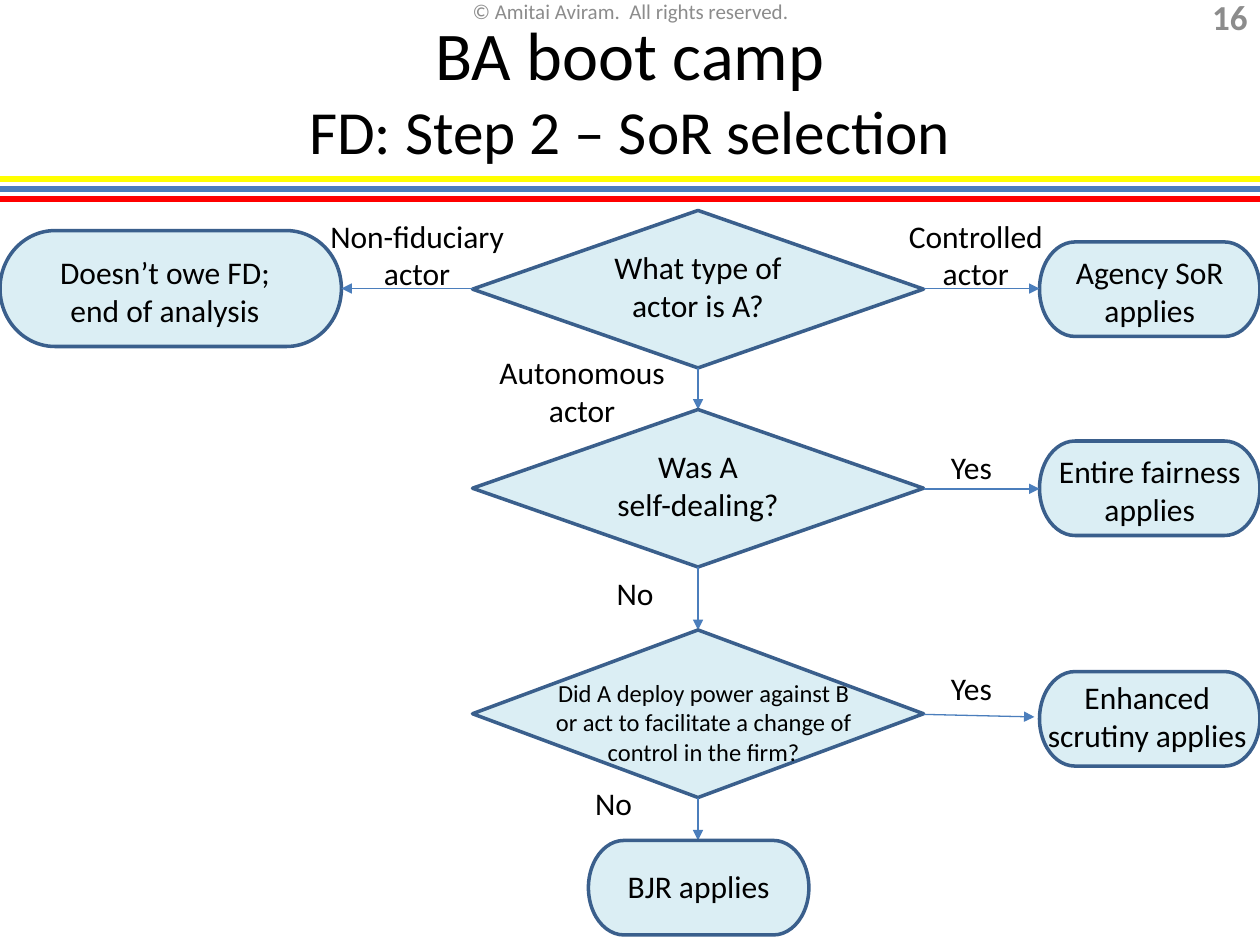
from lxml.etree import SubElement
from pptx import Presentation
from pptx.dml.color import RGBColor
from pptx.enum.shapes import MSO_CONNECTOR, MSO_SHAPE
from pptx.enum.text import MSO_ANCHOR, PP_ALIGN
from pptx.oxml.ns import qn
from pptx.util import Inches, Pt


def color(value):
    """Turn a hex string into a colour."""
    return RGBColor.from_string(value)


def add_text(slide, box, lines, anchor=MSO_ANCHOR.TOP, align=PP_ALIGN.CENTER, tint="000000", bold=False):
    """Add a text box whose (text, size) lines are parted by line breaks."""
    frame = slide.shapes.add_textbox(*map(Inches, box)).text_frame
    frame.word_wrap = True
    frame.vertical_anchor = anchor
    paragraph = frame.paragraphs[0]
    paragraph.alignment = align
    for index, (text, size) in enumerate(lines):
        if index:
            paragraph.add_line_break()
        run = paragraph.add_run()
        run.text = text
        run.font.color.rgb = color(tint)
        formats = {"name": "Calibri", "size": Pt(size), "bold": bold}
        for name, value in formats.items():
            setattr(run.font, name, value)


def add_line(slide, start, end, tint, width, arrow=False):
    """Add a straight line, with an arrowhead at its end if asked."""
    line = slide.shapes.add_connector(MSO_CONNECTOR.STRAIGHT, *map(Inches, (*start, *end)))
    line.line.color.rgb = color(tint)
    line.line.width = Pt(width)
    if arrow:
        SubElement(line.line._get_or_add_ln(), qn("a:tailEnd"), type="triangle")
    SubElement(line._element.spPr, qn("a:effectLst"))


def add_arrow(slide, start, end):
    """Add a thin flow arrow."""
    add_line(slide, start, end, "4B7EBC", 0.75, arrow=True)


def add_node(slide, kind, box, text_box, lines, size=18):
    """Add a flowchart shape with its text placed relative to the shape."""
    left, top, width, height = box
    shape = slide.shapes.add_shape(kind, *map(Inches, box))
    shape.shadow.inherit = False
    shape.fill.solid()
    shape.fill.fore_color.rgb = color("DBEEF4")
    shape.line.color.rgb = color("3A5F8C")
    shape.line.width = Pt(2)
    text_left, text_top, text_width, text_height = text_box
    add_text(slide, (left + text_left, top + text_top, text_width, text_height),
             [(line, size) for line in lines])


def add_header(slide, box):
    """Add the title, copyright line, slide number and coloured rules."""
    left, top, width, height = box
    right, bottom = left + width, top + height
    for offset, tint in ((0.08, "4B7EBC"), (0.16, "FF0000"), (0, "FFFF00")):
        add_line(slide, (left, bottom + offset), (right, bottom + offset), tint, 3)
    middle = MSO_ANCHOR.MIDDLE
    add_text(slide, (left + 3.42, top, 3.17, 0.17),
             [("© Amitai Aviram.  All rights reserved.", 12)], middle, tint="8C8C8C")
    add_text(slide, (right - 0.67, top + 0.01, 0.67, 0.24), [("16", 20)],
             middle, PP_ALIGN.RIGHT, "8C8C8C", True)
    add_text(slide, box, [("BA boot camp", 39), ("FD: Step 2 – SoR selection", 35)], middle)


def add_decision(slide, box, text_box, lines, size, next_top, label_box, label):
    """Add a decision diamond and the labelled arrow down to the next step."""
    left, top, width, height = box
    center, bottom = left + width / 2, top + height
    add_node(slide, MSO_SHAPE.FLOWCHART_DECISION, box, text_box, lines, size)
    add_arrow(slide, (center, bottom), (center, next_top))
    label_left, label_top, label_width, label_height = label_box
    add_text(slide, (left + label_left, bottom + label_top, label_width, label_height), [(label, 18)])


def add_outcome(slide, box, text_box, lines, start, end, label_box, label):
    """Add an outcome beside a decision, with the labelled arrow to it."""
    add_node(slide, MSO_SHAPE.FLOWCHART_TERMINATOR, box, text_box, lines)
    add_arrow(slide, start, end)
    add_text(slide, label_box, [(label, 18)])


def add_flowchart(slide, box):
    """Add all decisions and outcomes of the flowchart."""
    left, top, width, height = box
    right = left + width
    diamond_left, diamond_width = left + 3.75, 3.58
    diamond_right = diamond_left + diamond_width
    outcome_left = right - 1.75
    rows = [top, top + 1.58, top + 3.33, top + 5]
    decisions = [
        (1.25, (0.75, 0.25, 2.08, 0.71), ["What type of actor is A?"], 18,
         (0.08, -0.17, 1.58, 0.71), "Autonomous actor"),
        (1.25, (0.75, 0.25, 2.08, 0.71), ["Was A", "self-dealing?"], 18,
         (0.75, 0.01, 1.08, 0.4), "No"),
        (1.33, (0.5, 0.33, 2.67, 0.81),
         ["Did A deploy power against B or act to facilitate a change of control in the firm?"], 14,
         (0.58, -0.16, 1.08, 0.4), "No"),
    ]
    for row, next_top, (depth, text_box, lines, size, label_box, label) in zip(rows, rows[1:], decisions):
        add_decision(slide, (diamond_left, row, diamond_width, depth), text_box, lines, size,
                     next_top, label_box, label)

    outcomes = [
        (0.25, (0, 0.04, 1.75, 0.71), "Agency SoR applies", (0.62, 0.62), 0,
         (-0.25, 0, 1.33, 0.71), "Controlled actor"),
        (0.25, (0, 0.04, 1.75, 0.71), "Entire fairness applies", (0.63, 0.63), 0,
         (-0.16, 0.26, 1.08, 0.4), "Yes"),
        (0.33, (-0.04, 0, 1.79, 0.71), "Enhanced scrutiny applies", (0.67, 0.69), 0.04,
         (-0.16, 0.26, 1.08, 0.4), "Yes"),
    ]
    for row, (offset, text_box, text, (start, end), gap, label_box, label) in zip(rows, outcomes):
        label_left, label_top, *label_size = label_box
        add_outcome(slide, (outcome_left, row + offset, 1.75, 0.75), text_box, [text],
                    (diamond_right, row + start), (outcome_left - gap, row + end),
                    (diamond_right + label_left, row + label_top, *label_size), label)

    add_outcome(slide, (left, top + 0.16, 2.71, 0.92), (0.08, 0.13, 2.46, 0.71),
                ["Doesn’t owe FD;", "end of analysis"],
                (diamond_left, top + 0.62), (left + 2.71, top + 0.62),
                (left + 2.5, top, 1.62, 0.71), "Non-fiduciary actor")
    add_node(slide, MSO_SHAPE.FLOWCHART_TERMINATOR, (left + 4.67, rows[-1], 1.75, 0.75),
             (0, 0.16, 1.75, 0.4), ["BJR applies"])


def main():
    """Build and save the presentation."""
    presentation = Presentation()
    presentation.slide_width = Inches(10)
    presentation.slide_height = Inches(7.5)
    slide = presentation.slides.add_slide(presentation.slide_layouts[6])
    add_header(slide, (0, 0, 10, 1.42))
    add_flowchart(slide, (0, 1.67, 10, 5.75))
    presentation.save("out.pptx")


if __name__ == "__main__":
    main()
